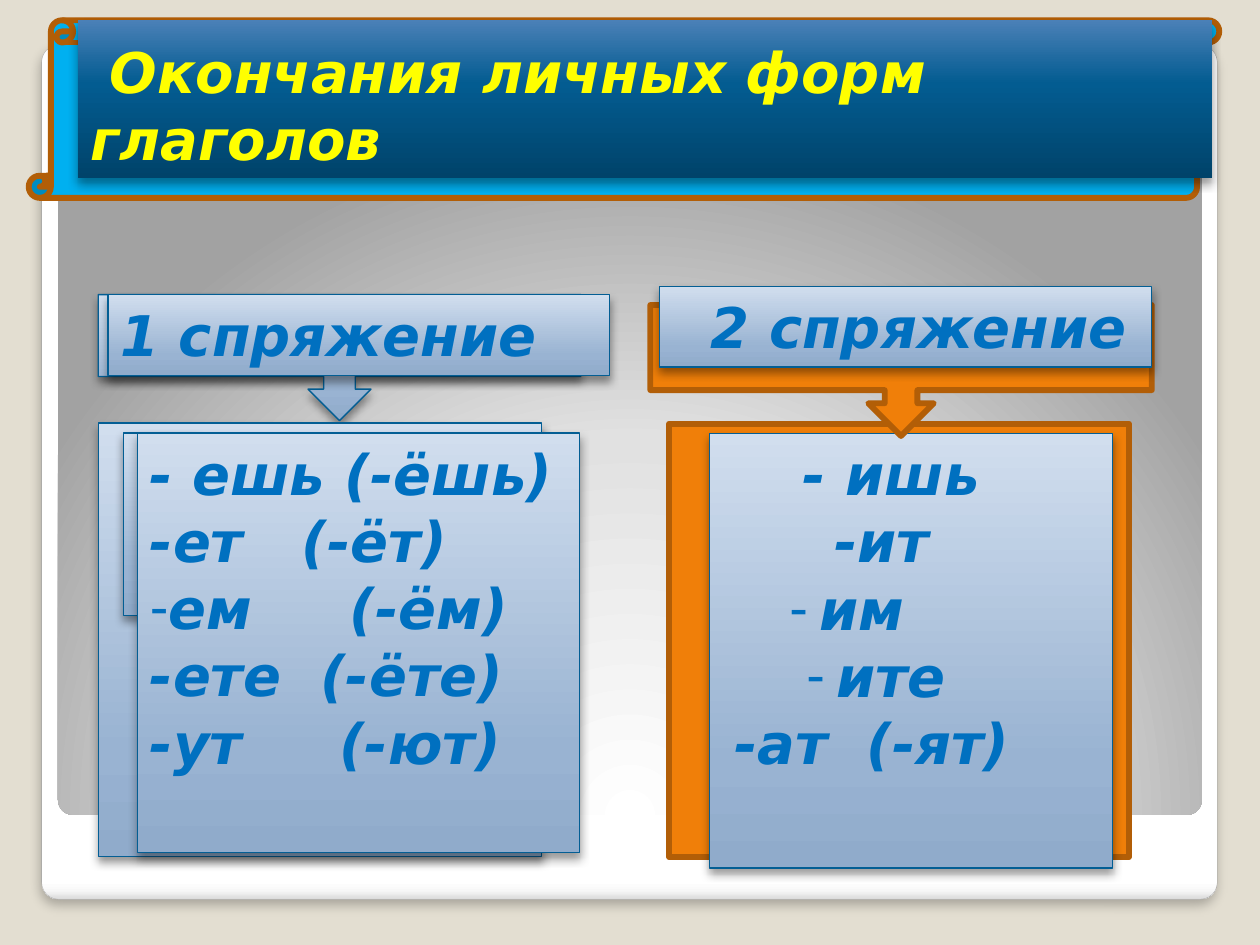
import dataclasses

import lxml.etree
import pptx
import pptx.dml.color
import pptx.enum.shapes
import pptx.enum.text
import pptx.oxml
import pptx.oxml.ns
import pptx.util

Cm, Pt = pptx.util.Cm, pptx.util.Pt
SHAPE = pptx.enum.shapes.MSO_SHAPE
ALIGN = pptx.enum.text.PP_ALIGN
ANCHOR = pptx.enum.text.MSO_ANCHOR
qn = pptx.oxml.ns.qn


@dataclasses.dataclass(frozen=True)
class Theme:
    font: str = "DejaVu Sans"
    size: int = 32
    background: str = "E3DED1"
    title_text: str = "FFFF00"
    text: str = "0070C0"
    scroll: str = "00B0F0"
    orange: str = "F07F09"
    orange_line: str = "B25E07"
    blue_line: str = "035E94"
    card_line: str = "A4A4A4"
    heavy: float = 3.35
    thin: float = 0.75
    title_fill: tuple = ((0, "00436A"), (60, "035C91"), (100, "4A80B7"))
    panel_fill: tuple = ((0, "90ABCB"), (25, "99B3D2"), (100, "D1DEEE"))
    card_fill: tuple = ((0, "FFFFFF"), (98, "FFFFFF"), (99, "F7F7F7"), (100, "DADADA"))
    glow_fill: tuple = ((0, "FFFFFF"), (55, "E1E1E1"), (100, "A2A2A2"))


THEME = Theme()


def rgb(color):
    return pptx.dml.color.RGBColor.from_string(color)


def add_child(parent, tag, **attributes):
    child = lxml.etree.SubElement(parent, qn(tag))
    for name, value in attributes.items():
        child.set(name, str(value))
    return child


def fill_gradient(box, stops, angle=None):
    """Angle runs clockwise in degrees; without one the glow rises from below."""
    box.fill.gradient()
    gradient = box._element.spPr.find(qn("a:gradFill"))
    for child in list(gradient):
        gradient.remove(child)
    stop_list = add_child(gradient, "a:gsLst")
    for position, color in stops:
        stop = add_child(stop_list, "a:gs", pos=position * 1000)
        add_child(stop, "a:srgbClr", val=color)
    if angle is None:
        centre = add_child(gradient, "a:path", path="circle")
        add_child(centre, "a:fillToRect", l=50000, t=175000, r=50000, b=-75000)
    else:
        add_child(gradient, "a:lin", ang=angle * 60000, scaled=0)


def add_shadow(box, opacity=40, blur=5.2, distance=3):
    box.shadow.inherit = False
    effects = box._element.spPr.find(qn("a:effectLst"))
    shadow = add_child(effects, "a:outerShdw", blurRad=Pt(blur), dist=Pt(distance),
                       dir=90 * 60000, algn="ctr", rotWithShape=0)
    color = add_child(shadow, "a:srgbClr", val="000000")
    add_child(color, "a:alpha", val=opacity * 1000)


def set_line(box, color, width):
    box.line.color.rgb = rgb(color)
    box.line.width = Pt(width)


def add_box(page, shape, area):
    box = page.shapes.add_shape(shape, *map(Cm, area))
    box.shadow.inherit = False
    return box


def add_solid(page, shape, area, fill, line):
    box = add_box(page, shape, area)
    box.fill.solid()
    box.fill.fore_color.rgb = rgb(fill)
    set_line(box, line, THEME.heavy)
    return box


def add_orange(page, shape, area):
    return add_solid(page, shape, area, THEME.orange, THEME.orange_line)


def add_panel(page, shape, area):
    box = add_box(page, shape, area)
    fill_gradient(box, THEME.panel_fill, 270)
    set_line(box, THEME.blue_line, THEME.thin)
    add_shadow(box)
    return box


def add_span(para, text, color):
    span = para.add_run()
    span.text = text
    font = span.font
    font.name, font.size = THEME.font, Pt(THEME.size)
    font.bold = font.italic = True
    font.color.rgb = rgb(color)


def write_lines(box, lines, align, wrap=True):
    """Each line is (text, whether it has a dash bullet)."""
    frame = box.text_frame
    frame.word_wrap = wrap
    frame.vertical_anchor = ANCHOR.TOP
    for index, (text, bulleted) in enumerate(lines):
        para = frame.add_paragraph() if index else frame.paragraphs[0]
        para.alignment = align
        if bulleted:
            properties = para._p.get_or_add_pPr()
            add_child(properties, "a:buFont", typeface="Arial")
            add_child(properties, "a:buChar", char="-")
        add_span(para, text, THEME.text)


def build_backdrop(page):
    page.background.fill.solid()
    page.background.fill.fore_color.rgb = rgb(THEME.background)
    card = add_box(page, SHAPE.ROUNDED_RECTANGLE, (0.84, 0.91, 23.7, 17.22))
    fill_gradient(card, THEME.card_fill, 90)
    set_line(card, THEME.card_line, 0.16)
    add_shadow(card, 25, 6, 4)
    glow = add_box(page, SHAPE.ROUNDED_RECTANGLE, (1.17, 1.19, 23.06, 15.24))
    fill_gradient(glow, THEME.glow_fill)
    glow.line.fill.background()
    for box in (card, glow):
        box.adjustments[0] = 0.02


def build_title(page, left, top):
    add_solid(page, SHAPE.VERTICAL_SCROLL, (left, top, 24, 3.58),
              THEME.scroll, THEME.orange_line)
    title = page.shapes.title
    page.shapes._spTree.append(title._element)
    title.left, title.top = Cm(left + 0.99), Cm(top)
    title.width, title.height = Cm(22.86), Cm(3.18)
    fill_gradient(title, THEME.title_fill, 270)
    add_shadow(title)
    frame = title.text_frame
    frame.word_wrap = True
    frame.auto_size = pptx.enum.text.MSO_AUTO_SIZE.NONE
    frame.vertical_anchor = ANCHOR.BOTTOM
    frame.paragraphs[0].alignment = ALIGN.LEFT
    add_span(frame.paragraphs[0], " Окончания личных форм глаголов", THEME.title_text)


def build_first_conjugation(page, left, top):
    add_panel(page, SHAPE.DOWN_ARROW_CALLOUT, (left, top, 9.73, 2.54))
    add_panel(page, SHAPE.RECTANGLE, (left, top + 2.59, 8.94, 8.74))
    add_panel(page, SHAPE.RECTANGLE, (left + 0.51, top + 2.79, 1.5, 3.68))
    endings = add_panel(page, SHAPE.RECTANGLE, (left + 0.79, top + 2.79, 8.92, 8.46))
    write_lines(endings, [("- ешь (-ёшь)", False), ("-ет   (-ёт)", False),
                          ("ем     (-ём)", True), ("-ете  (-ёте)", False),
                          ("-ут     (-ют)", False)], ALIGN.LEFT)
    heading = add_panel(page, SHAPE.RECTANGLE, (left + 0.2, top, 10.11, 1.63))
    write_lines(heading, [("1 спряжение", False)], ALIGN.LEFT)


def build_second_conjugation(page, left, top):
    add_orange(page, SHAPE.RECTANGLE, (left + 0.38, top + 2.77, 9.27, 8.74))
    endings = add_panel(page, SHAPE.RECTANGLE, (left + 1.19, top + 2.97, 8.13, 8.76))
    write_lines(endings, [("- ишь  ", False), ("-ит   ", False), ("им      ", True),
                          ("ите   ", True), ("-ат  (-ят)    ", False)],
                ALIGN.CENTER, wrap=False)
    add_orange(page, SHAPE.DOWN_ARROW_CALLOUT, (left, top + 0.38, 10.11, 2.64))
    heading = add_panel(page, SHAPE.RECTANGLE, (left + 0.18, top, 9.93, 1.63))
    write_lines(heading, [("  2 спряжение", False)], ALIGN.LEFT)


def main():
    deck = pptx.Presentation()
    deck.slide_width, deck.slide_height = Cm(25.4), Cm(19.05)
    page = deck.slides.add_slide(deck.slide_layouts[5])
    build_backdrop(page)
    build_title(page, 0.58, 0.41)
    build_first_conjugation(page, 1.98, 5.94)
    build_second_conjugation(page, 13.11, 5.77)
    deck.save("out.pptx")


if __name__ == "__main__":
    main()
